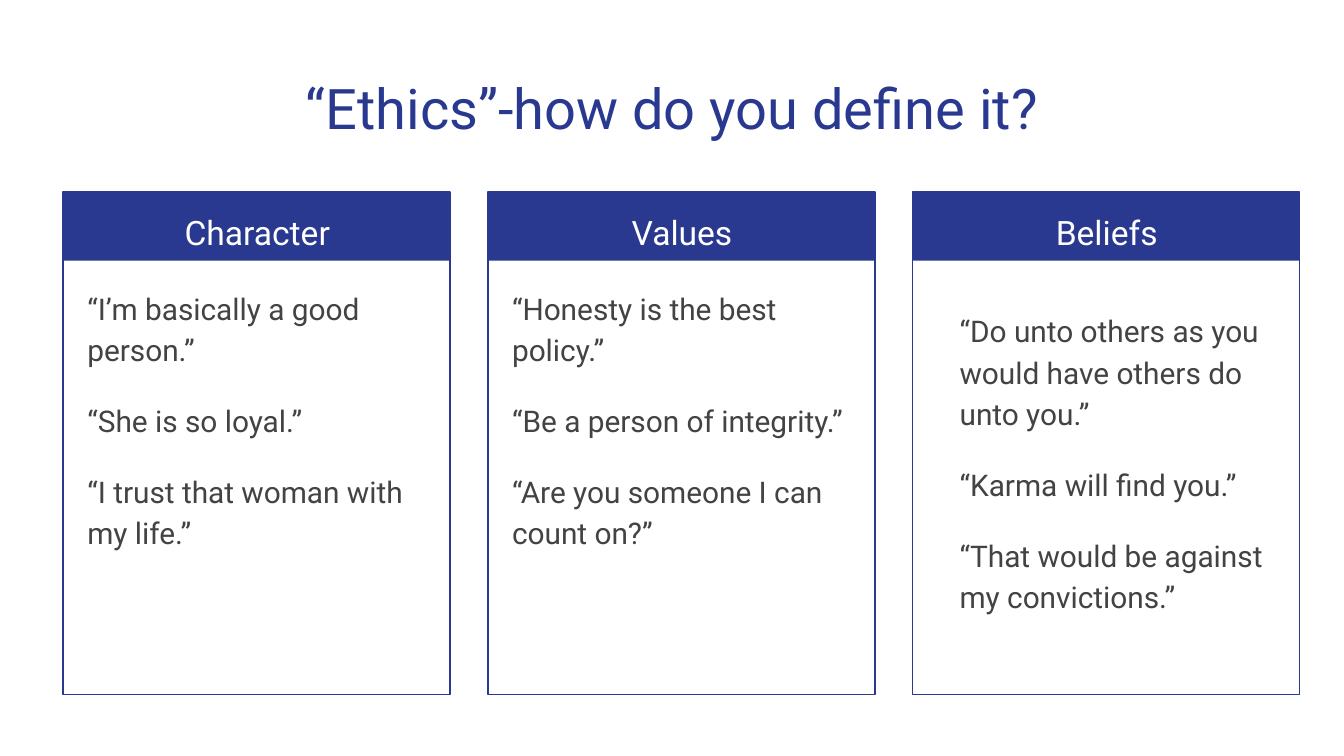
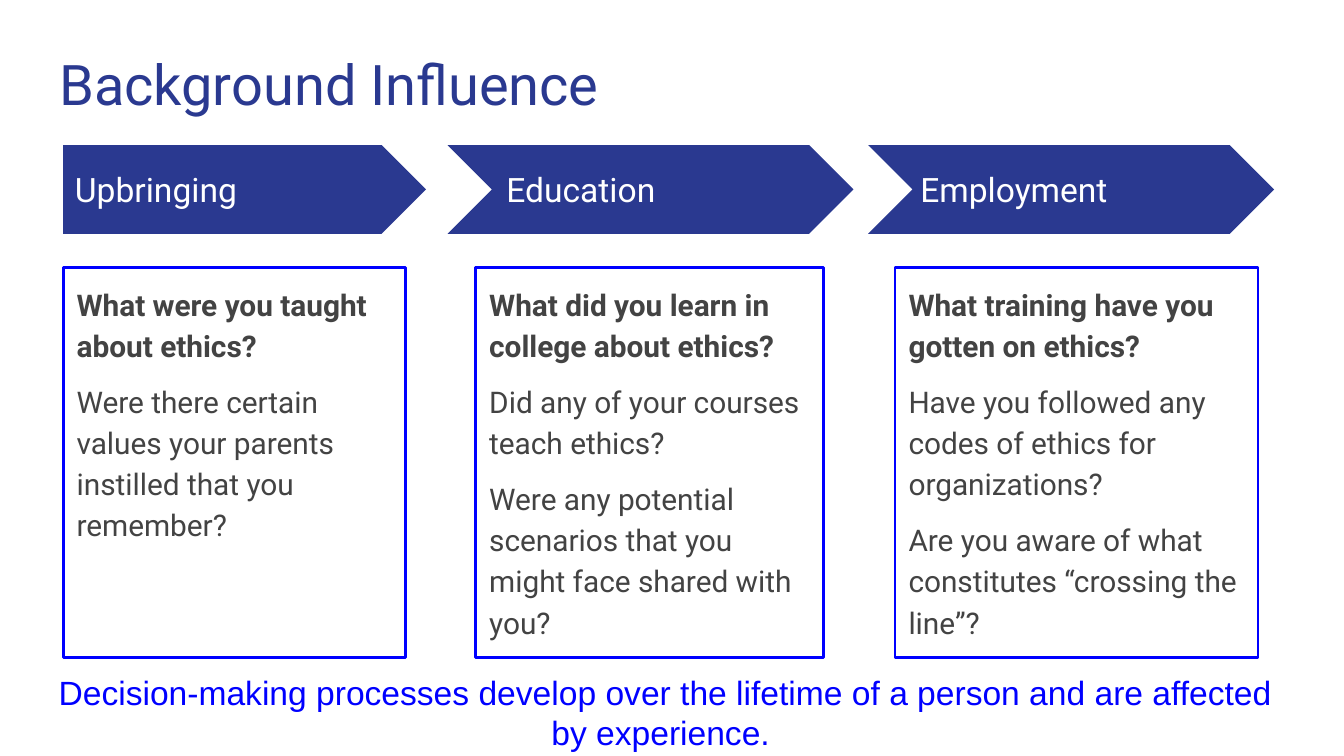
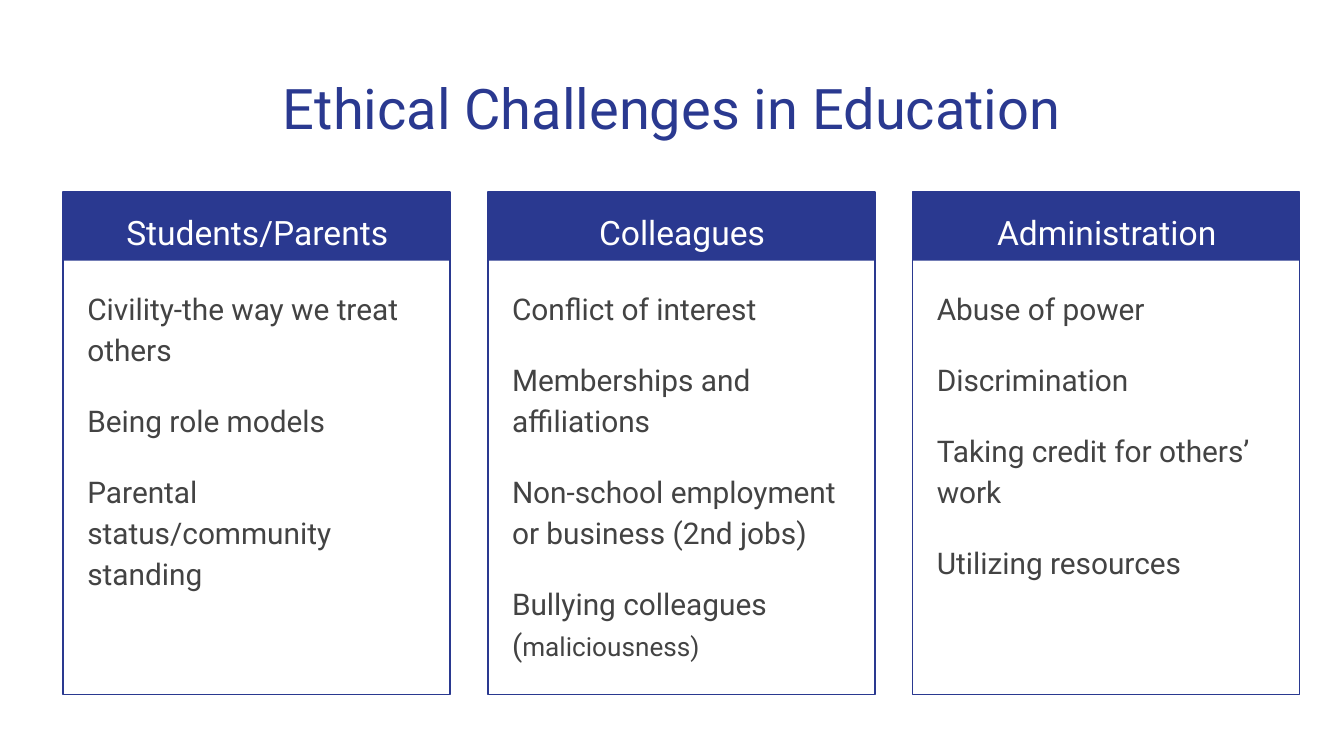
from lxml.etree import SubElement
from pptx import Presentation
from pptx.dml.color import RGBColor
from pptx.enum.shapes import MSO_SHAPE as Shape
from pptx.enum.text import MSO_ANCHOR as Anchor, MSO_AUTO_SIZE as AutoSize, PP_ALIGN as Align
from pptx.oxml.ns import qn
from pptx.util import Inches, Pt

WIDTH = 10
HEIGHT = WIDTH * 9 / 16
NAVY, BLUE, GREY, WHITE = "2A3990", "0000FF", "434343", "FFFFFF"
COMPARISON_LAYOUT = 4  # a title and four body placeholders
LEFT = 0.47

# Card columns: (heading, paragraphs, shift of the list right and down).
# A tuple paragraph is (text, smaller text).
ETHICS = ("“Ethics”-how do you define it?", [
    ("Character", ["“I’m basically a good person.”", "“She is so loyal.”",
                   "“I trust that woman with my life.”"], (0, 0)),
    ("Values", ["“Honesty is the best policy.”", "“Be a person of integrity.”",
                "“Are you someone I can count on?”"], (0, 0)),
    ("Beliefs", ["“Do unto others as you would have others do unto you.”",
                 "“Karma will find you.”",
                 "“That would be against my convictions.”"], (0.17, 0.17)),
])
CHALLENGES = ("Ethical Challenges in Education", [
    ("Students/Parents", ["Civility-the way we treat others", "Being role models",
                          "Parental status/community standing"], (0, 0)),
    ("Colleagues", ["Conflict of interest", "Memberships and affiliations",
                    "Non-school employment or business (2nd jobs)",
                    ("Bullying colleagues (", "maliciousness)")], (0, 0)),
    ("Administration", ["Abuse of power", "Discrimination",
                        "Taking credit for others’ work", "Utilizing resources"], (0, 0)),
])

# Stages: heading and its left, arrow (shape, left, width),
# question box (left, width), paragraphs.
STAGES = [
    ("Upbringing", 0.46, (Shape.PENTAGON, LEFT, 2.7), (LEFT, 2.55),
     ["What were you taught about ethics?",
      "Were there certain values your parents instilled that you remember?"]),
    ("Education", 3.67, (Shape.CHEVRON, 3.33, 3.02), (3.54, 2.59),
     ["What did you learn in college about ethics?",
      "Did any of your courses teach ethics?",
      "Were any potential scenarios that you might face shared with you?"]),
    ("Employment", 6.75, (Shape.CHEVRON, 6.46, 3.02), (6.66, 2.7),
     ["What training have you gotten on ethics?",
      "Have you followed any codes of ethics for organizations?",
      "Are you aware of what constitutes “crossing the line”?"]),
]
CONCLUSION = ("Decision-making processes develop over the lifetime of a person "
              "and are affected by experience. ")


def rgb(value):
    return RGBColor.from_string(value)


def place(box, left, top, width, height):
    box.left, box.top = Inches(left), Inches(top)
    box.width, box.height = Inches(width), Inches(height)


def write(box, paragraphs, size, color, font="Roboto", align=Align.LEFT,
          anchor=Anchor.TOP, spacing=1, gap=0, bold_first=False):
    """Fill a box with unbulleted paragraphs, gap points apart."""
    frame = box.text_frame
    frame.word_wrap, frame.auto_size = True, AutoSize.NONE
    frame.vertical_anchor = anchor
    frame.margin_left = frame.margin_right = Inches(0.1)
    frame.margin_top = frame.margin_bottom = Inches(0.1)
    for number, content in enumerate(paragraphs):
        para = frame.add_paragraph() if number else frame.paragraphs[0]
        settings = para._p.get_or_add_pPr()
        settings.set("marL", "0")
        settings.set("indent", "0")
        SubElement(settings, qn("a:buNone"))
        para.alignment, para.line_spacing = align, spacing
        para.space_before, para.space_after = Pt(gap if number else 0), Pt(0)
        para.font.name, para.font.size = font, Pt(size)
        para.font.color.rgb = rgb(color)
        para.font.bold = bold_first and number == 0
        text, *smaller = (content,) if isinstance(content, str) else content
        para.add_run().text = text
        for part in smaller:
            span = para.add_run()
            span.text, span.font.size = part, Pt(size - 2)


def add_text(page, area, text, color, **style):
    box = page.shapes.add_textbox(0, 0, 0, 0)
    place(box, *area)
    write(box, [text], 18, color, **style)


def add_outline(box, color, weight):
    box.fill.background()
    box.line.color.rgb, box.line.width = rgb(color), Pt(weight)


def add_plain_shape(shapes, kind, *area):
    """Add a navy shape without line or shadow."""
    shape = shapes.add_shape(kind, *map(Inches, area))
    shape.shadow.inherit = False
    shape.fill.solid()
    shape.fill.fore_color.rgb = rgb(NAVY)
    shape.line.fill.background()
    return shape


def add_page(deck, title, top, align):
    """Add a slide with its title; return it with three body placeholders."""
    page = deck.slides.add_slide(deck.slide_layouts[COMPARISON_LAYOUT])
    place(page.shapes.title, 0.34, top, 9.32, 0.66)
    write(page.shapes.title, [title], 30, NAVY, align=align)
    *lists, spare = [box for box in page.placeholders if box.placeholder_format.idx]
    spare.element.getparent().remove(spare.element)
    return page, lists


def add_cards_page(deck, title, cards):
    page, lists = add_page(deck, title, 0.45, Align.CENTER)
    top, width, pitch = 1.43, 2.88, 3.16
    for column, (heading, paragraphs, (right, down)) in enumerate(cards):
        left = LEFT + column * pitch
        group = page.shapes.add_group_shape()
        add_plain_shape(group.shapes, Shape.RECTANGLE, left, top, width, 0.51)
        frame = add_plain_shape(group.shapes, Shape.RECTANGLE, left, top, width, 3.74)
        add_outline(frame, NAVY, 0.75)
        add_text(page, (left + 0.08, top, 2.73, 0.5), heading, WHITE,
                 align=Align.CENTER, spacing=1.15)
        place(lists[column], left + 0.08 + right, 2.02 + down, 2.71, 3.06)
        write(lists[column], paragraphs, 16, GREY, spacing=1.15, gap=16)


def add_stages_page(deck):
    page, lists = add_page(deck, "Background Influence", 0.27, Align.LEFT)
    for box, (heading, text_left, arrow, question, paragraphs) in zip(lists, STAGES):
        kind, arrow_left, arrow_width = arrow
        add_plain_shape(page.shapes, kind, arrow_left, 1.08, arrow_width, 0.66)
        add_text(page, (text_left, 1.24, 2.47, 0.34), heading, WHITE,
                 anchor=Anchor.MIDDLE)
        box_left, box_width = question
        place(box, box_left, 1.99, box_width, 2.9)
        add_outline(box, BLUE, 1.5)
        write(box, paragraphs, 16, GREY, spacing=1.15, gap=8, bold_first=True)
    add_text(page, (0.24, 4.9, 9.42, 0.66), CONCLUSION, BLUE,
             font="Arial", align=Align.CENTER)


def main():
    deck = Presentation()
    deck.slide_width, deck.slide_height = Inches(WIDTH), Inches(HEIGHT)
    add_cards_page(deck, *ETHICS)
    add_stages_page(deck)
    add_cards_page(deck, *CHALLENGES)
    deck.save("out.pptx")


if __name__ == "__main__":
    main()
